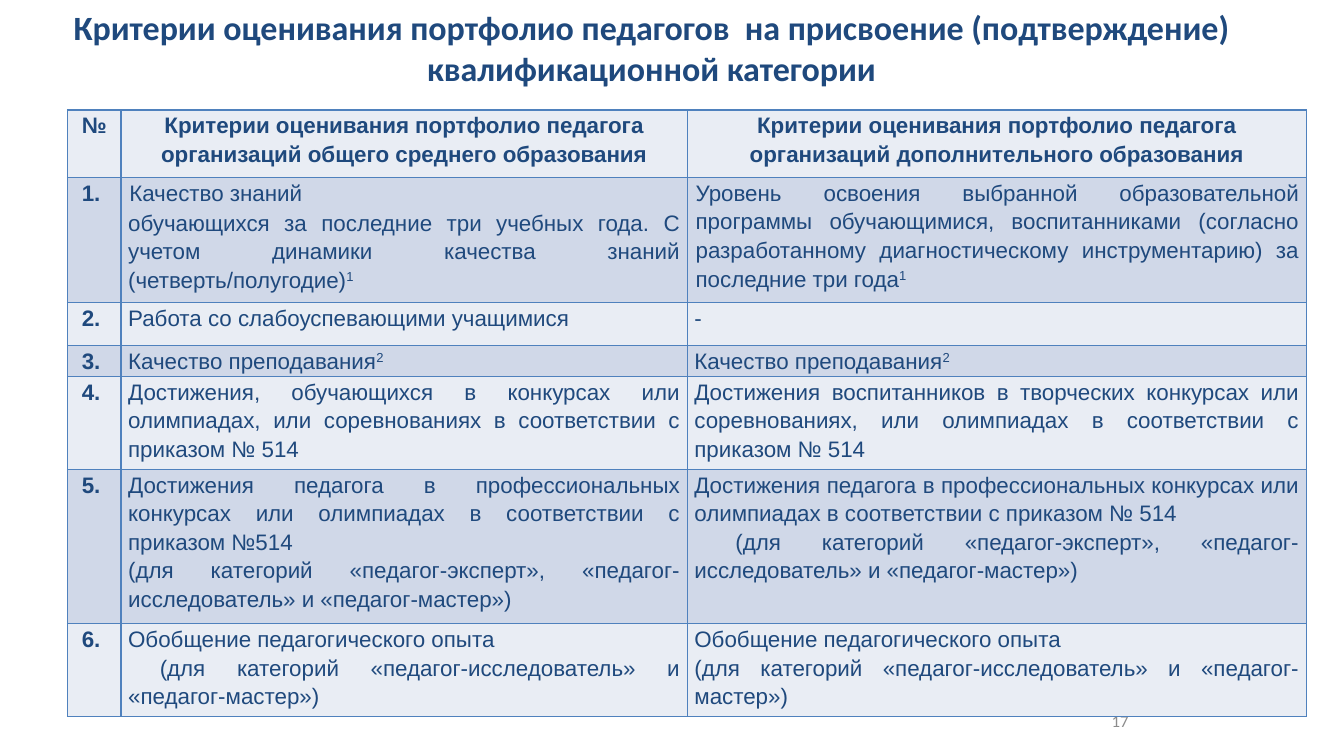
"""Build the slide with the criteria for scoring teacher portfolios."""
from dataclasses import dataclass

from lxml import etree
from pptx import Presentation
from pptx.dml.color import RGBColor
from pptx.enum.text import MSO_ANCHOR, PP_ALIGN
from pptx.util import Cm, Pt

MIDDLE = MSO_ANCHOR.MIDDLE
CENTER, JUSTIFY = PP_ALIGN.CENTER, PP_ALIGN.JUSTIFY
NS = "http://schemas.openxmlformats.org/drawingml/2006/main"
COLORS = {"navy": "1F497D", "gray": "8C8C8C", "edge": "4F81BD",
          "light": "E9EDF4", "dark": "D0D8E8"}
COLS = (1.35, 14.27, 15.6)
SIDE = Cm(0.18)


@dataclass
class Para:
    text: str
    note: str = ""
    inset: bool = False


@dataclass
class Row:
    high: float
    mark: str
    left: list[Para]
    right: list[Para]


@dataclass
class Box:
    left: float
    top: float
    width: float
    high: float
    text: str
    size: float
    color: str
    bold: bool


BOXES = [
    Box(0.66, 0.76, 31.52, 0.86,
        "Критерии оценивания портфолио педагогов  на присвоение "
        "(подтверждение) квалификационной категории", 24.3, "navy", True),
    Box(24.28, 17.65, 7.9, 1.02, "17", 12, "gray", False),
]

ROWS = [
    Row(1.7, "№",
        [Para("Критерии оценивания портфолио педагога "
              "организаций общего среднего образования")],
        [Para("Критерии оценивания портфолио педагога "
              "организаций дополнительного образования")]),
    Row(2.59, "1. ",
        [Para("Качество знаний", inset=True),
         Para("обучающихся за последние три учебных года. С учетом динамики "
              "качества знаний (четверть/полугодие)", "1")],
        [Para("Уровень освоения выбранной образовательной программы "
              "обучающимися, воспитанниками (согласно разработанному "
              "диагностическому инструментарию) за последние три года",
              "1", True)]),
    Row(1.09, "2. ",
        [Para("Работа со слабоуспевающими учащимися")], [Para("-")]),
    Row(0.56, "3. ",
        [Para("Качество преподавания", "2")],
        [Para("Качество преподавания", "2")]),
    Row(2.21, "4. ",
        [Para("Достижения, обучающихся в конкурсах или олимпиадах, или "
              "соревнованиях в соответствии с приказом № 514")],
        [Para("Достижения воспитанников в творческих конкурсах или "
              "соревнованиях, или олимпиадах в соответствии с "
              "приказом № 514")]),
    Row(2.92, "5. ",
        [Para("Достижения педагога в профессиональных конкурсах или "
              "олимпиадах в соответствии с приказом №514 "),
         Para("(для категорий «педагог-эксперт», «педагог-исследователь» "
              "и «педагог-мастер»)")],
        [Para("Достижения педагога в профессиональных конкурсах или "
              "олимпиадах в соответствии с приказом № 514"),
         Para(" (для категорий «педагог-эксперт», «педагог-исследователь» "
              "и «педагог-мастер»)")]),
    Row(2.21, "6. ",
        [Para("Обобщение педагогического опыта"),
         Para(" (для категорий «педагог-исследователь» и "
              "«педагог-мастер»)")],
        [Para("Обобщение педагогического опыта "),
         Para("(для категорий «педагог-исследователь» и "
              "«педагог-мастер»)")]),
]


def write(frame, paras: list[Para], *, size: float = 16, font: str = "Arial",
          color: str = "navy", bold: bool = False, align=CENTER,
          space: float = 1.15) -> None:
    for i, para in enumerate(paras):
        line = frame.add_paragraph() if i else frame.paragraphs[0]
        line.alignment = align
        line.line_spacing = space
        if para.inset:
            line.space_after = Pt(1)
            line._p.get_or_add_pPr().set("marL", str(Cm(0.03)))
        for text in filter(None, (para.text, para.note)):
            run = line.add_run()
            run.text = text
            run.font.size = Pt(size)
            run.font.name = font
            run.font.bold = bold
            run.font.color.rgb = RGBColor.from_string(COLORS[color])
            if text == para.note:
                run._r.get_or_add_rPr().set("baseline", "30000")


def frame_cell(cell) -> None:
    props = cell._tc.get_or_add_tcPr()
    for i, side in enumerate("LRTB"):
        edge = etree.Element(f"{{{NS}}}ln{side}", w=str(Pt(1)))
        fill = etree.SubElement(edge, f"{{{NS}}}solidFill")
        etree.SubElement(fill, f"{{{NS}}}srgbClr", val=COLORS["edge"])
        props.insert(i, edge)


def add_box(slide, box: Box) -> None:
    shape = slide.shapes.add_textbox(
        Cm(box.left), Cm(box.top), Cm(box.width), Cm(box.high))
    frame = shape.text_frame
    frame.word_wrap = True
    frame.vertical_anchor = MIDDLE
    write(frame, [Para(box.text)], size=box.size, font="Calibri",
          color=box.color, bold=box.bold, space=1.0)


def add_grid(slide) -> None:
    high = sum(row.high for row in ROWS)
    table = slide.shapes.add_table(
        len(ROWS), len(COLS), Cm(1.7), Cm(2.77), Cm(sum(COLS)), Cm(high)).table
    table.first_row = table.horz_banding = False
    for col, width in zip(table.columns, COLS):
        col.width = Cm(width)
    for r, row in enumerate(ROWS):
        table.rows[r].height = Cm(row.high)
        shade = COLORS["dark" if r % 2 else "light"]
        for c, paras in enumerate(([Para(row.mark)], row.left, row.right)):
            cell = table.cell(r, c)
            cell.margin_left = cell.margin_right = SIDE
            cell.margin_top = cell.margin_bottom = 0
            cell.fill.solid()
            cell.fill.fore_color.rgb = RGBColor.from_string(shade)
            frame_cell(cell)
            head = r == 0 or c == 0
            write(cell.text_frame, paras, bold=head,
                  align=CENTER if head else JUSTIFY)


def main() -> None:
    deck = Presentation()
    deck.slide_width, deck.slide_height = Cm(33.87), Cm(19.05)
    slide = deck.slides.add_slide(deck.slide_layouts[6])
    for box in BOXES:
        add_box(slide, box)
    add_grid(slide)
    deck.save("out.pptx")


if __name__ == "__main__":
    main()
